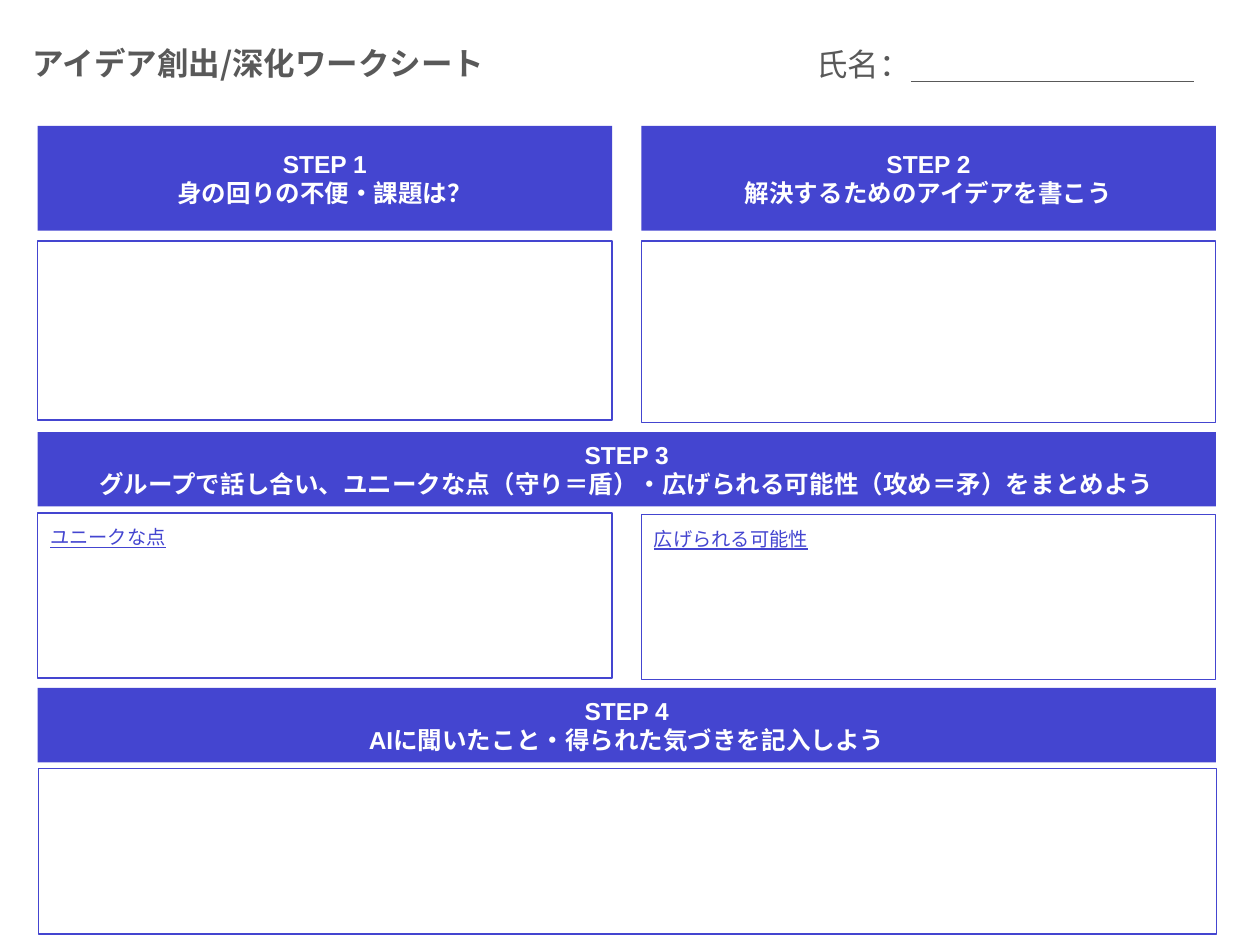
from dataclasses import dataclass

from lxml import etree
from pptx import Presentation
from pptx.dml.color import RGBColor
from pptx.enum.shapes import MSO_CONNECTOR, MSO_SHAPE
from pptx.enum.text import MSO_ANCHOR, MSO_AUTO_SIZE, PP_ALIGN
from pptx.oxml.ns import qn
from pptx.slide import Slide
from pptx.text.text import TextFrame
from pptx.util import Cm, Pt

RECT = MSO_SHAPE.RECTANGLE
STRAIGHT = MSO_CONNECTOR.STRAIGHT
TOP, MIDDLE = MSO_ANCHOR.TOP, MSO_ANCHOR.MIDDLE
LEFT, CENTER = PP_ALIGN.LEFT, PP_ALIGN.CENTER
GROW = MSO_AUTO_SIZE.SHAPE_TO_FIT_TEXT

COLORS = {"blue": "4445D0", "white": "FFFFFF", "gray": "595959"}
LATIN, JAPANESE = "Arial", "Noto Sans CJK JP"

COL_1, COL_2 = 0.76, 12.93
HALF, FULL = 11.58, 23.75
INSET = 0.25


@dataclass
class Band:
    step: int
    text: str
    left: float
    top: float
    width: float
    height: float


@dataclass
class Box:
    left: float
    top: float
    width: float
    height: float
    label: str = ""


@dataclass
class Style:
    font: str
    size: int
    color: str
    bold: bool = False
    underline: bool = False
    align: PP_ALIGN = LEFT
    anchor: MSO_ANCHOR = TOP


HEAD = Style(JAPANESE, 18, "gray", bold=True)
NAME = Style(JAPANESE, 18, "gray")
STEP = Style(LATIN, 14, "white", bold=True, align=CENTER, anchor=MIDDLE)
LABEL = Style(JAPANESE, 11, "blue", underline=True)

BANDS = [
    Band(1, "身の回りの不便・課題は？", COL_1, 2.54, HALF, 2.11),
    Band(2, "解決するためのアイデアを書こう", COL_2, 2.54, HALF, 2.11),
    Band(3, "グループで話し合い、ユニークな点（守り＝盾）・広げられる可能性（攻め＝矛）をまとめよう",
         COL_1, 8.71, FULL, 1.5),
    Band(4, "AIに聞いたこと・得られた気づきを記入しよう", COL_1, 13.87, FULL, 1.5),
]
BOXES = [
    Box(COL_1, 4.86, HALF, 3.61),
    Box(COL_2, 4.86, HALF, 3.66),
    Box(COL_1, 10.34, HALF, 3.33, "ユニークな点"),
    Box(COL_2, 10.37, HALF, 3.33, "広げられる可能性"),
    Box(0.78, 15.5, FULL, 3.33),
]


def color(key: str) -> RGBColor:
    return RGBColor.from_string(COLORS[key])


def write(frame: TextFrame, lines: list[str], style: Style) -> None:
    frame.word_wrap = True
    frame.vertical_anchor = style.anchor
    frame.margin_left = frame.margin_right = Cm(INSET)
    frame.margin_top = frame.margin_bottom = Cm(INSET)
    frame.text = "\n".join(lines)
    for para in frame.paragraphs:
        para.alignment = style.align
        font = para.font
        font.name, font.size = style.font, Pt(style.size)
        font.bold, font.underline = style.bold, style.underline
        font.color.rgb = color(style.color)
        props = para._p.pPr.find(qn("a:defRPr"))
        # East Asian text takes the same face as Latin text
        etree.SubElement(props, qn("a:ea"), typeface=style.font)


def place(shape, left: float, top: float, width: float, height: float) -> None:
    shape.left, shape.top = Cm(left), Cm(top)
    shape.width, shape.height = Cm(width), Cm(height)


def draw_rect(slide: Slide, item: Band | Box, fill: str):
    shape = slide.shapes.add_shape(
        RECT, Cm(item.left), Cm(item.top), Cm(item.width), Cm(item.height))
    shape.shadow.inherit = False
    shape.fill.solid()
    shape.fill.fore_color.rgb = color(fill)
    return shape


def draw_band(slide: Slide, band: Band) -> None:
    shape = draw_rect(slide, band, "blue")
    shape.line.fill.background()
    write(shape.text_frame, [f"STEP {band.step}", band.text], STEP)


def draw_box(slide: Slide, box: Box) -> None:
    shape = draw_rect(slide, box, "white")
    shape.line.color.rgb = color("blue")
    shape.line.width = Pt(0.75)
    if box.label:
        write(shape.text_frame, [box.label], LABEL)


def draw_head(slide: Slide) -> None:
    title = slide.shapes.title
    place(title, 0.41, 0.64, 19.08, 1.27)
    write(title.text_frame, ["アイデア創出/深化ワークシート"], HEAD)
    title.text_frame.auto_size = GROW

    name = slide.shapes.add_textbox(Cm(16.21), Cm(0.66), Cm(8.89), Cm(1.27))
    write(name.text_frame, ["氏名："], NAME)
    name.text_frame.auto_size = GROW

    rule = slide.shapes.add_connector(
        STRAIGHT, Cm(18.36), Cm(1.64), Cm(24.07), Cm(1.64))
    rule.line.color.rgb = color("gray")
    rule.line.width = Pt(0.75)
    etree.SubElement(rule._element.spPr, qn("a:effectLst"))


def main() -> None:
    deck = Presentation()
    deck.slide_width, deck.slide_height = Cm(25.4), Cm(19.05)
    slide = deck.slides.add_slide(deck.slide_layouts.get_by_name("Title Only"))
    draw_head(slide)
    for band in BANDS:
        draw_band(slide, band)
    for box in BOXES:
        draw_box(slide, box)
    deck.save("out.pptx")


if __name__ == "__main__":
    main()
